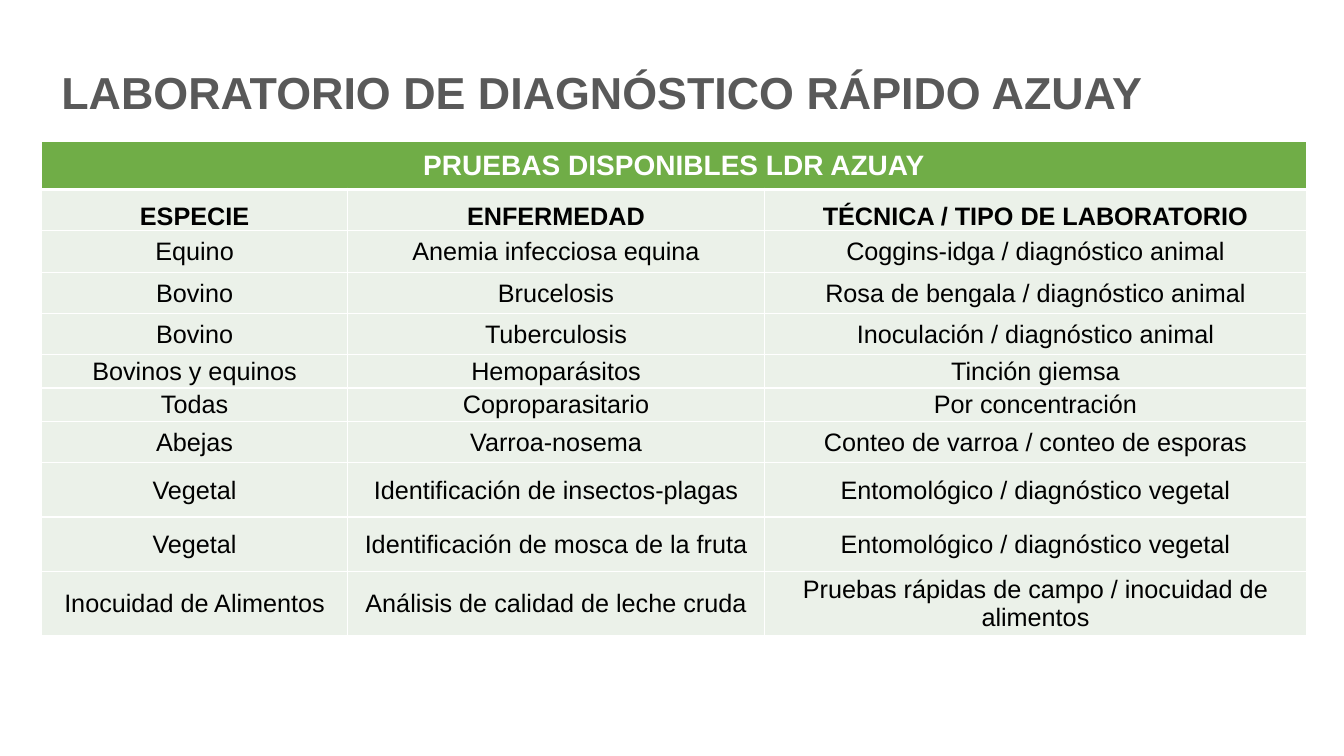
from dataclasses import dataclass

from lxml.etree import SubElement
from pptx import Presentation
from pptx.dml.color import RGBColor
from pptx.enum.text import MSO_ANCHOR, MSO_AUTO_SIZE, PP_ALIGN
from pptx.oxml.ns import qn
from pptx.util import Inches, Pt


@dataclass(frozen=True)
class Theme:
    font: str = "Arial"
    title: str = "595959"
    green: str = "70AD47"
    pale: str = "EBF1E9"
    white: str = "FFFFFF"
    black: str = "000000"
    title_size: int = 32
    banner_size: int = 20
    body_size: int = 18


@dataclass(frozen=True)
class Test:
    species: str
    disease: str
    method: str
    height: float = 0.41


@dataclass(frozen=True)
class Style:
    size: int
    color: str
    fill: str
    bold: bool = False
    anchor: MSO_ANCHOR = MSO_ANCHOR.MIDDLE
    top: int = 1
    bottom: int = 1


THEME = Theme()
BANNER = Style(THEME.banner_size, THEME.white, THEME.green, True, bottom=3)
HEAD = Style(THEME.body_size, THEME.black, THEME.pale, True, MSO_ANCHOR.BOTTOM, top=3)
BODY = Style(THEME.body_size, THEME.black, THEME.pale)
WIDTHS = (3.04, 4.13, 5.38)
BANNER_HEIGHT = 0.48
TESTS = (
    Test("ESPECIE", "ENFERMEDAD", "TÉCNICA / TIPO DE LABORATORIO"),
    Test("Equino", "Anemia infecciosa equina", "Coggins-idga / diagnóstico animal"),
    Test("Bovino", "Brucelosis", "Rosa de bengala / diagnóstico animal"),
    Test("Bovino", "Tuberculosis", "Inoculación / diagnóstico animal"),
    Test("Bovinos y equinos", "Hemoparásitos", "Tinción giemsa", 0.33),
    Test("Todas", "Coproparasitario", "Por concentración", 0.33),
    Test("Abejas", "Varroa-nosema", "Conteo de varroa / conteo de esporas"),
    Test("Vegetal", "Identificación de insectos-plagas",
         "Entomológico / diagnóstico vegetal", 0.54),
    Test("Vegetal", "Identificación de mosca de la fruta",
         "Entomológico / diagnóstico vegetal", 0.54),
    Test("Inocuidad de Alimentos", "Análisis de calidad de leche cruda",
         "Pruebas rápidas de campo / inocuidad de alimentos", 0.64),
)


def set_font(para, size: int, color: str, bold: bool) -> None:
    font = para.font
    font.name, font.size, font.bold = THEME.font, Pt(size), bold
    font.color.rgb = RGBColor.from_string(color)


def add_borders(cell, style: Style) -> None:
    props = cell._tc.get_or_add_tcPr()
    sides = {"lnL": 1, "lnR": 1, "lnT": style.top, "lnB": style.bottom}
    for side, width in sides.items():
        line = SubElement(props, qn(f"a:{side}"), w=str(Pt(width)))
        fill = SubElement(line, qn("a:solidFill"))
        SubElement(fill, qn("a:srgbClr"), val=THEME.white)


def fill_cell(cell, text: str, style: Style) -> None:
    cell.text = text
    cell.vertical_anchor = style.anchor
    cell.margin_left = cell.margin_right = cell.margin_top = Inches(0.01)
    cell.margin_bottom = 0
    add_borders(cell, style)
    cell.fill.solid()
    cell.fill.fore_color.rgb = RGBColor.from_string(style.fill)
    para = cell.text_frame.paragraphs[0]
    para.alignment = PP_ALIGN.CENTER
    set_font(para, style.size, style.color, style.bold)


def add_tests(slide) -> None:
    heights = [BANNER_HEIGHT] + [test.height for test in TESTS]
    table = slide.shapes.add_table(
        len(heights), len(WIDTHS), Inches(0.41), Inches(1.4),
        Inches(sum(WIDTHS)), Inches(sum(heights))).table
    table.first_row = table.horz_banding = False
    for column, width in zip(table.columns, WIDTHS):
        column.width = Inches(width)
    for row, height in zip(table.rows, heights):
        row.height = Inches(height)
    rows = [("PRUEBAS DISPONIBLES LDR AZUAY", "", "")]
    rows += [(test.species, test.disease, test.method) for test in TESTS]
    styles = [BANNER, HEAD] + [BODY] * (len(rows) - 2)
    for row, texts, style in zip(table.rows, rows, styles):
        for cell, text in zip(row.cells, texts):
            fill_cell(cell, text, style)
    table.cell(0, 0).merge(table.cell(0, len(WIDTHS) - 1))


def add_title(slide) -> None:
    box = slide.shapes.add_textbox(Inches(0.51), Inches(0.59), Inches(12.02), Inches(0.64))
    frame = box.text_frame
    frame.word_wrap = True
    frame.auto_size = MSO_AUTO_SIZE.SHAPE_TO_FIT_TEXT
    frame.text = "LABORATORIO DE DIAGNÓSTICO RÁPIDO AZUAY"
    set_font(frame.paragraphs[0], THEME.title_size, THEME.title, True)


def main() -> None:
    deck = Presentation()
    deck.slide_width, deck.slide_height = Inches(13.33), Inches(7.5)
    slide = deck.slides.add_slide(deck.slide_layouts[6])
    add_tests(slide)
    add_title(slide)
    deck.save("out.pptx")


if __name__ == "__main__":
    main()
